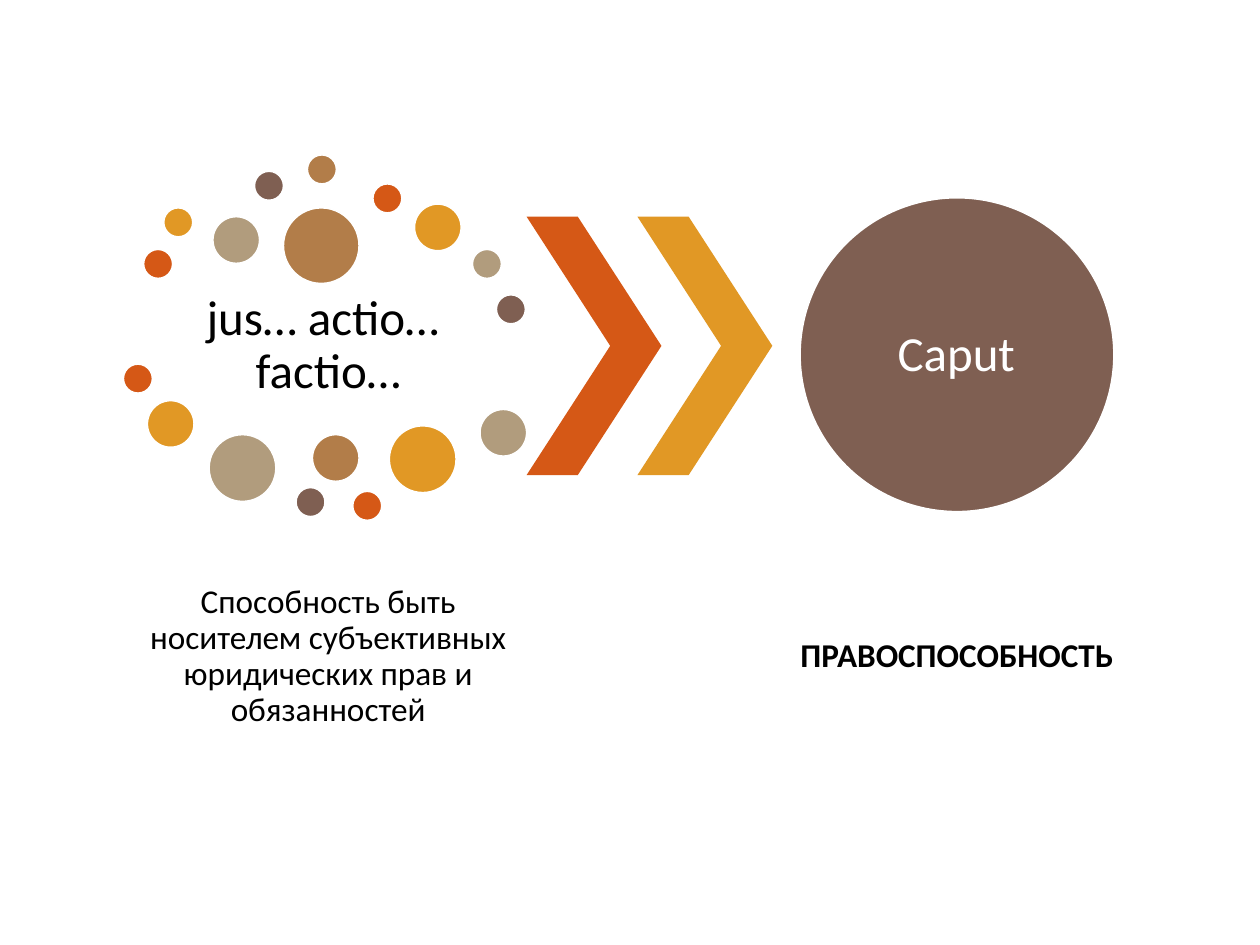
from itertools import cycle

from pptx import Presentation
from pptx.dml.color import RGBColor
from pptx.enum.shapes import MSO_SHAPE as Shape
from pptx.enum.text import MSO_ANCHOR as Anchor, PP_ALIGN as Align
from pptx.util import Inches, Pt

ORANGE = RGBColor(0xD5, 0x58, 0x16)
YELLOW = RGBColor(0xE1, 0x98, 0x25)
TAN = RGBColor(0xB1, 0x9C, 0x7D)
BROWN = RGBColor(0x7F, 0x5F, 0x52)
CARAMEL = RGBColor(0xB2, 0x7D, 0x49)
BLACK = RGBColor(0, 0, 0)
WHITE = RGBColor(0xFF, 0xFF, 0xFF)
DOT_COLORS = (ORANGE, YELLOW, TAN, BROWN, CARAMEL)

FONT = "Calibri"
HEADING, CAPTION = 28, 19
SMALL, MEDIUM, LARGE, HUGE = 0.23, 0.37, 0.53, 0.6

# Left, top, diameter; the colours repeat in order
DOTS = [
    (1.14, 1.98, SMALL), (1.3, 1.65, SMALL), (1.69, 1.72, MEDIUM),
    (2.02, 1.36, SMALL), (2.44, 1.23, SMALL), (2.96, 1.46, SMALL),
    (3.29, 1.62, MEDIUM), (3.75, 1.98, SMALL), (3.94, 2.34, SMALL),
    (2.25, 1.65, HUGE), (0.98, 2.89, SMALL), (1.17, 3.18, MEDIUM),
    (1.66, 3.45, LARGE), (2.35, 3.87, SMALL), (2.48, 3.45, MEDIUM),
    (2.8, 3.9, SMALL), (3.09, 3.38, LARGE), (3.81, 3.25, MEDIUM),
]
CHEVRON_LEFT, CHEVRON_STEP = 4.18, 0.88
CHEVRON_COLORS = (ORANGE, YELLOW)
COLUMN_WIDTH = 2.93
LEFT_COLUMN, RIGHT_COLUMN = 1.14, 6.13
CAPTION_TOP, CAPTION_HEIGHT = 4.31, 1.81

# Text, box, format
TEXTS = [
    ("jus… actio… \vfactio…", (LEFT_COLUMN, 2.27, COLUMN_WIDTH, 0.96),
     dict(size=HEADING, margin=0.04)),
    ("Способность быть носителем субъективных юридических прав и обязанностей",
     (LEFT_COLUMN, CAPTION_TOP, COLUMN_WIDTH, CAPTION_HEIGHT),
     dict(size=CAPTION, margin=0.03)),
    ("Caput", (6.71, 1.94, 1.76, 1.76), dict(size=HEADING, color=WHITE)),
    ("ПРАВОСПОСОБНОСТЬ",
     (RIGHT_COLUMN, CAPTION_TOP, COLUMN_WIDTH, CAPTION_HEIGHT),
     dict(size=CAPTION, margin=0.03, bold=True)),
]


def add_filled(slide, kind, box, color, outlined=False):
    shape = slide.shapes.add_shape(kind, *map(Inches, box))
    shape.shadow.inherit = False
    shape.fill.solid()
    shape.fill.fore_color.rgb = color
    if outlined:
        shape.line.color.rgb = WHITE
        shape.line.width = Pt(0.85)
    else:
        shape.line.fill.background()
    return shape


def add_text(slide, text, box, size, margin=0, color=BLACK, bold=False):
    frame = slide.shapes.add_textbox(*map(Inches, box)).text_frame
    frame.word_wrap = True
    frame.vertical_anchor = Anchor.MIDDLE
    frame.margin_left = frame.margin_right = Inches(margin)
    frame.margin_top = frame.margin_bottom = Inches(margin)
    paragraph = frame.paragraphs[0]
    paragraph.text = text
    paragraph.alignment = Align.CENTER
    paragraph.line_spacing = 0.9
    for run in paragraph.runs:
        run.font.name = FONT
        run.font.size = Pt(size)
        run.font.bold = bold
        run.font.color.rgb = color


def main():
    presentation = Presentation()
    presentation.slide_width, presentation.slide_height = Inches(10), Inches(7.5)
    slide = presentation.slides.add_slide(presentation.slide_layouts[6])

    for (left, top, diameter), color in zip(DOTS, cycle(DOT_COLORS)):
        add_filled(slide, Shape.OVAL, (left, top, diameter, diameter), color, outlined=True)
    for index, color in enumerate(CHEVRON_COLORS):
        left = CHEVRON_LEFT + index * CHEVRON_STEP
        chevron = add_filled(slide, Shape.CHEVRON, (left, 1.72, 1.07, 2.05), color)
        chevron.adjustments[0] = 0.62
    add_filled(slide, Shape.OVAL, (6.35, 1.57, 2.49, 2.49), BROWN, outlined=True)
    for text, box, text_format in TEXTS:
        add_text(slide, text, box, **text_format)

    presentation.save("out.pptx")


if __name__ == "__main__":
    main()
